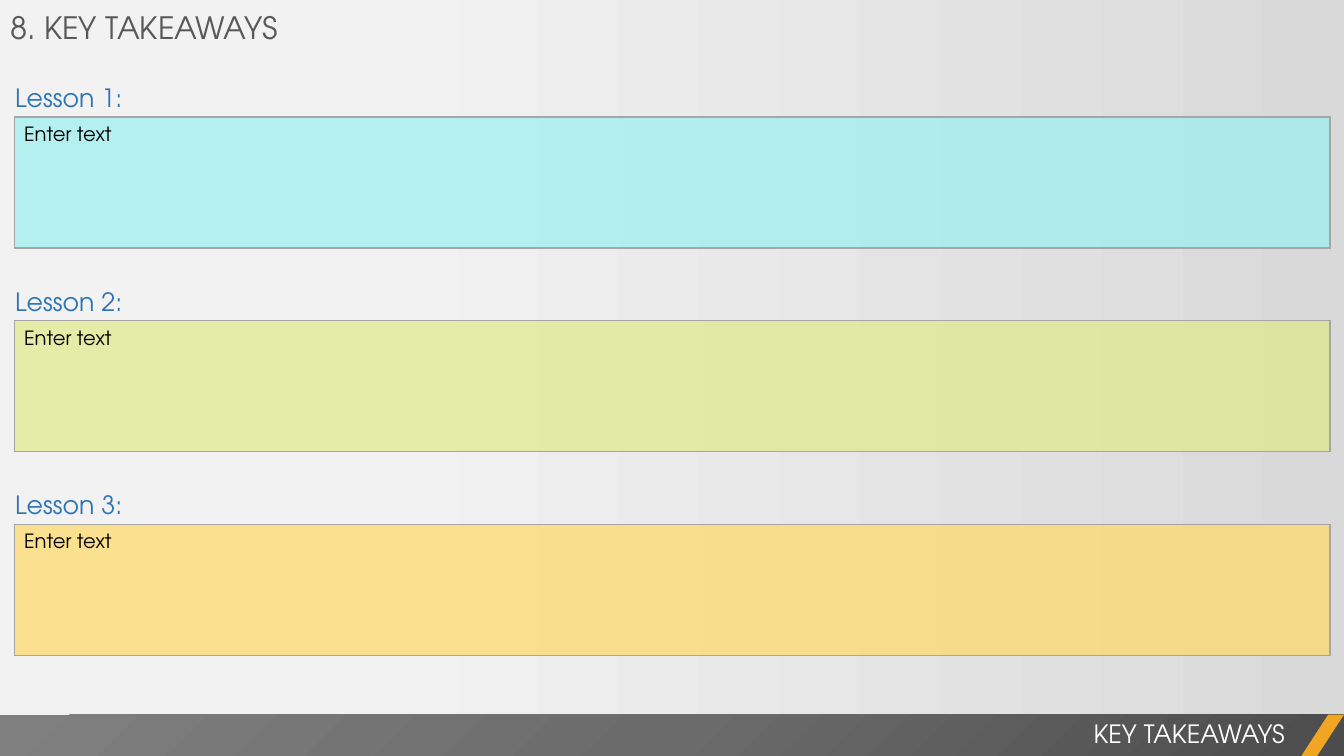
from dataclasses import dataclass

from lxml import etree
from pptx import Presentation
from pptx import util as u
from pptx.dml import color
from pptx.enum import shapes, text
from pptx.oxml import ns


@dataclass(frozen=True)
class Theme:
    font: str = "TeX Gyre Adventor"
    title: str = "595959"
    heading: str = "2E75B6"
    body: str = "000000"
    footer: str = "FFFFFF"
    border: str = "A6A6A6"
    accent: str = "F0A622"
    backdrop: tuple = ((28, "F2F2F2"), (100, "D9D9D9"))
    bar: tuple = ((0, "4C4C4C"), (50, "6B6B6B"), (100, "808080"))
    answers: tuple = ("9CF0F0", "E0EA88", "FFD966")
    title_size: int = 22
    heading_size: int = 18
    body_size: int = 14


def add_xml(parent, tag, **attributes):
    return etree.SubElement(parent, ns.qn(tag), attributes)


class Deck:
    """Draws styled elements on the current slide."""

    def __init__(self, theme):
        self.theme = theme
        self.presentation = Presentation()
        self.presentation.slide_width = u.Inches(13.33)
        self.presentation.slide_height = u.Inches(7.5)
        self.slide = self.presentation.slides.add_slide(self.presentation.slide_layouts[5])

    def backdrop(self):
        fill = self.slide.background.fill
        fill.gradient()
        fill.gradient_angle = 0
        for stop, (position, shade) in zip(fill.gradient_stops, self.theme.backdrop):
            stop.position = position / 100
            stop.color.rgb = color.RGBColor.from_string(shade)

    def add_words(self, frame, words, size, shade, align=text.PP_ALIGN.LEFT):
        paragraph = frame.paragraphs[0]
        paragraph.alignment = align
        run = paragraph.add_run()
        run.text = words
        run.font.name = self.theme.font
        run.font.size = u.Pt(size)
        run.font.color.rgb = color.RGBColor.from_string(shade)
        return paragraph

    def title(self, words, *box):
        heading = self.slide.shapes.title
        heading.left, heading.top, heading.width, heading.height = map(u.Inches, box)
        frame = heading.text_frame
        frame.word_wrap = False
        frame.auto_size = text.MSO_AUTO_SIZE.SHAPE_TO_FIT_TEXT
        frame.vertical_anchor = text.MSO_ANCHOR.TOP
        self.add_words(frame, words, self.theme.title_size, self.theme.title)

    def label(self, words, shade, *box, align=text.PP_ALIGN.LEFT):
        frame = self.slide.shapes.add_textbox(*map(u.Inches, box)).text_frame
        frame.word_wrap = True
        frame.auto_size = text.MSO_AUTO_SIZE.SHAPE_TO_FIT_TEXT
        return frame, self.add_words(frame, words, self.theme.heading_size, shade, align)

    def lesson_heading(self, words, *box):
        frame, paragraph = self.label(words, self.theme.heading, *box)
        frame.margin_left = frame.margin_right = u.Inches(0.12)
        frame.margin_top = frame.margin_bottom = u.Inches(0.06)
        paragraph.line_spacing = u.Pt(21.5)
        paragraph.space_before = u.Pt(3.6)

    def answer_table(self, words, shade, *box):
        table = self.slide.shapes.add_table(1, 1, *map(u.Inches, box)).table
        table.first_row = table.horz_banding = False
        cell = table.cell(0, 0)
        cell.margin_left = cell.margin_right = u.Inches(0.1)
        cell.margin_top = cell.margin_bottom = u.Inches(0.1)
        self.add_words(cell.text_frame, words, self.theme.body_size, self.theme.body)
        properties = cell._tc.get_or_add_tcPr()
        for side in ("a:lnL", "a:lnR", "a:lnT", "a:lnB"):
            edge = add_xml(properties, side, w=str(u.Pt(1)))
            add_xml(add_xml(edge, "a:solidFill"), "a:srgbClr", val=self.theme.border)
        tint = add_xml(add_xml(properties, "a:solidFill"), "a:srgbClr", val=shade)
        add_xml(tint, "a:alpha", val="70000")

    def shape(self, preset, shade, *box):
        block = self.slide.shapes.add_shape(preset, *map(u.Inches, box))
        block.shadow.inherit = False
        block.line.fill.background()
        block.fill.solid()
        block.fill.fore_color.rgb = color.RGBColor.from_string(shade)
        return block

    def footer_bar(self, *box):
        bar = self.shape(shapes.MSO_SHAPE.RECTANGLE, self.theme.bar[0][1], *box)
        properties = bar._element.spPr
        solid = properties.find(ns.qn("a:solidFill"))
        gradient = etree.Element(ns.qn("a:gradFill"), rotWithShape="1")
        stops = add_xml(gradient, "a:gsLst")
        for position, shade in self.theme.bar:
            stop = add_xml(stops, "a:gs", pos=str(position * 1000))
            add_xml(stop, "a:srgbClr", val=shade)
        add_xml(add_xml(gradient, "a:path", path="circle"), "a:fillToRect", l="100000", t="100000")
        properties.replace(solid, gradient)


def main():
    theme = Theme()
    deck = Deck(theme)
    deck.backdrop()
    deck.title("8. KEY TAKEAWAYS", 0, 0.04, 2.96, 0.47)
    for index, shade in enumerate(theme.answers):
        top = 1.16 + index * 2.02
        deck.answer_table("Enter text", shade, 0.14, top, 13.05, 1.3)
        deck.lesson_heading(f"Lesson {index + 1}:", 0.03, top - 0.4, 7.63, 0.41)
    deck.footer_bar(0, 7.09, 13.33, 0.42)
    slash = deck.shape(shapes.MSO_SHAPE.PARALLELOGRAM, theme.accent, 12.9, 7.09, 0.43, 0.42)
    slash.adjustments[0] = 0.65
    deck.label("KEY TAKEAWAYS", theme.footer, 0.4, 7.08, 12.44, 0.4, align=text.PP_ALIGN.RIGHT)
    deck.presentation.save("out.pptx")


if __name__ == "__main__":
    main()
